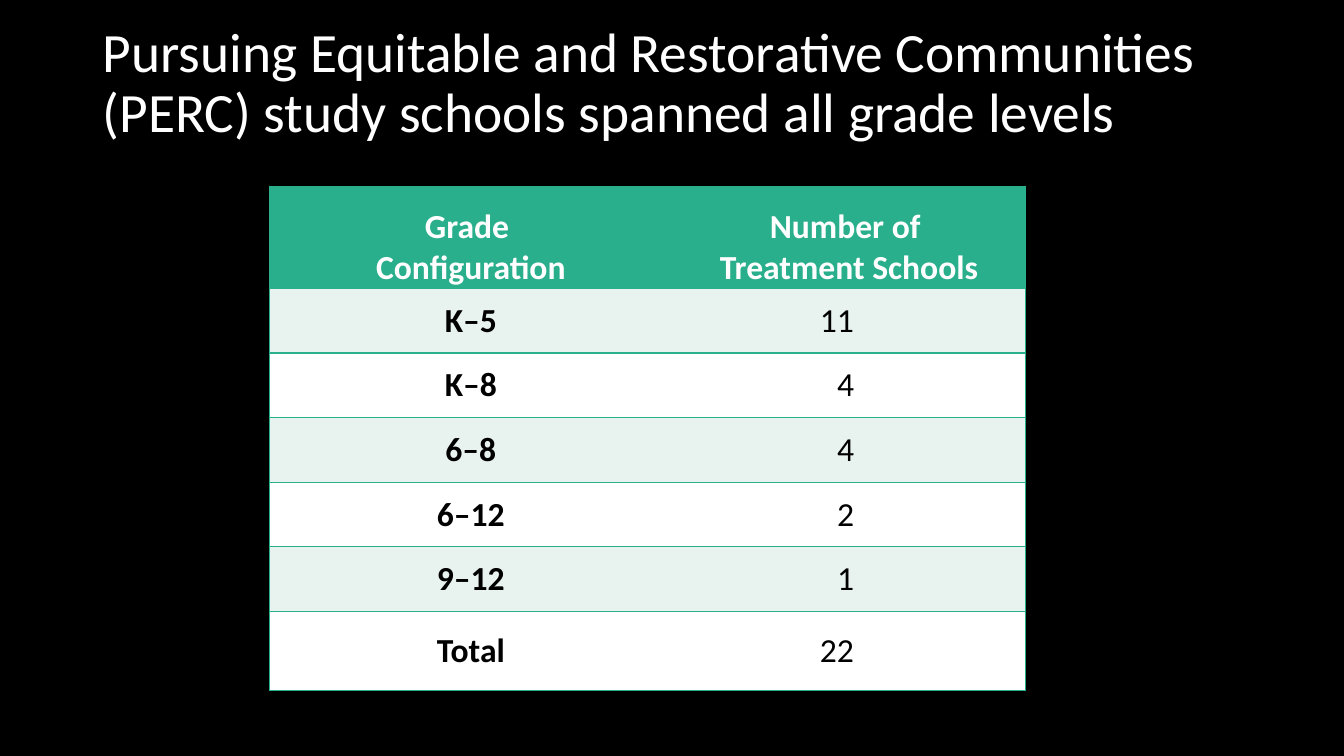
from pptx import Presentation
from pptx.dml.color import RGBColor
from pptx.enum.text import MSO_ANCHOR as Anchor, MSO_AUTO_SIZE as AutoSize, PP_ALIGN as Align
from pptx.oxml.ns import qn
from pptx.util import Inches, Pt
from lxml.etree import SubElement

BLACK = RGBColor(0x00, 0x00, 0x00)
WHITE = RGBColor(0xFF, 0xFF, 0xFF)
GREEN = RGBColor(0x29, 0xAF, 0x8C)
PALE_GREEN = RGBColor(0xE8, 0xF2, 0xEE)
FONT = "Calibri"

TITLE = ("Pursuing Equitable and Restorative Communities (PERC) "
         "study schools spanned all grade levels")
SCHOOLS = [("K–5", 11), ("K–8", 4), ("6–8", 4), ("6–12", 2), ("9–12", 1), ("Total", 22)]
COLUMN_WIDTHS = [4, 3.5]
ROW_HEIGHTS = [1.01] + [0.64] * 5 + [0.78]


def write_text(frame, text, size=24, color=BLACK, bold=False, align=Align.CENTER, spacing=None):
    """Fill a text frame; each line of text becomes a paragraph."""
    frame.text = text
    for paragraph in frame.paragraphs:
        paragraph.alignment = align
        paragraph.line_spacing = spacing
        for run in paragraph.runs:
            run.font.name = FONT
            run.font.size = Pt(size)
            run.font.bold = bold
            run.font.color.rgb = color


def set_borders(cell, visible):
    """Draw 1 pt green lines on the visible sides and none on the others."""
    properties = cell._tc.get_or_add_tcPr()
    for side in "LRTB":
        line = SubElement(properties, qn(f"a:ln{side}"), w=str(Pt(1)))
        if side in visible:
            fill = SubElement(line, qn("a:solidFill"))
            SubElement(fill, qn("a:srgbClr"), val=str(GREEN))
        else:
            SubElement(line, qn("a:noFill"))


def format_cell(cell, text, fill, borders, anchor=Anchor.MIDDLE, right=0.07, **text_format):
    cell.margin_left, cell.margin_right = Inches(0.07), Inches(right)
    cell.margin_top = cell.margin_bottom = 0
    cell.vertical_anchor = anchor
    set_borders(cell, borders)
    cell.fill.solid()
    cell.fill.fore_color.rgb = fill
    write_text(cell.text_frame, text, **text_format)


def add_title(slide, left, top, width, height):
    title = slide.shapes.title
    title.left, title.top = Inches(left), Inches(top)
    title.width, title.height = Inches(width), Inches(height)
    frame = title.text_frame
    frame.word_wrap = True
    frame.auto_size = AutoSize.NONE
    frame.vertical_anchor = Anchor.MIDDLE
    write_text(frame, TITLE, size=39.6, color=WHITE, align=Align.LEFT, spacing=0.9)


def add_school_table(slide, left, top, width, height):
    table = slide.shapes.add_table(
        len(ROW_HEIGHTS), len(COLUMN_WIDTHS),
        Inches(left), Inches(top), Inches(width), Inches(height)).table
    for column, share in zip(table.columns, COLUMN_WIDTHS):
        column.width = Inches(width * share / sum(COLUMN_WIDTHS))
    for row, share in zip(table.rows, ROW_HEIGHTS):
        row.height = Inches(height * share / sum(ROW_HEIGHTS))

    # Header row
    headings = [("Grade \nConfiguration", "LTB"), ("Number of \vTreatment Schools", "RTB")]
    for column, (heading, borders) in enumerate(headings):
        format_cell(table.cell(0, column), heading, GREEN, borders,
                    anchor=Anchor.BOTTOM, color=WHITE, bold=True)

    # Striped rows with right-aligned counts
    for row, (grades, count) in enumerate(SCHOOLS, start=1):
        fill = PALE_GREEN if row % 2 else WHITE
        format_cell(table.cell(row, 0), grades, fill, "LTB", bold=True)
        format_cell(table.cell(row, 1), str(count), fill, "RTB", right=1.7, align=Align.RIGHT)


def main():
    presentation = Presentation()
    presentation.slide_width, presentation.slide_height = Inches(13.33), Inches(7.5)
    slide = presentation.slides.add_slide(presentation.slide_layouts[5])
    slide.background.fill.solid()
    slide.background.fill.fore_color.rgb = BLACK
    add_title(slide, 0.92, 0.11, 11.5, 1.45)
    add_school_table(slide, 2.67, 1.85, 7.5, 5)
    presentation.save("out.pptx")


if __name__ == "__main__":
    main()
